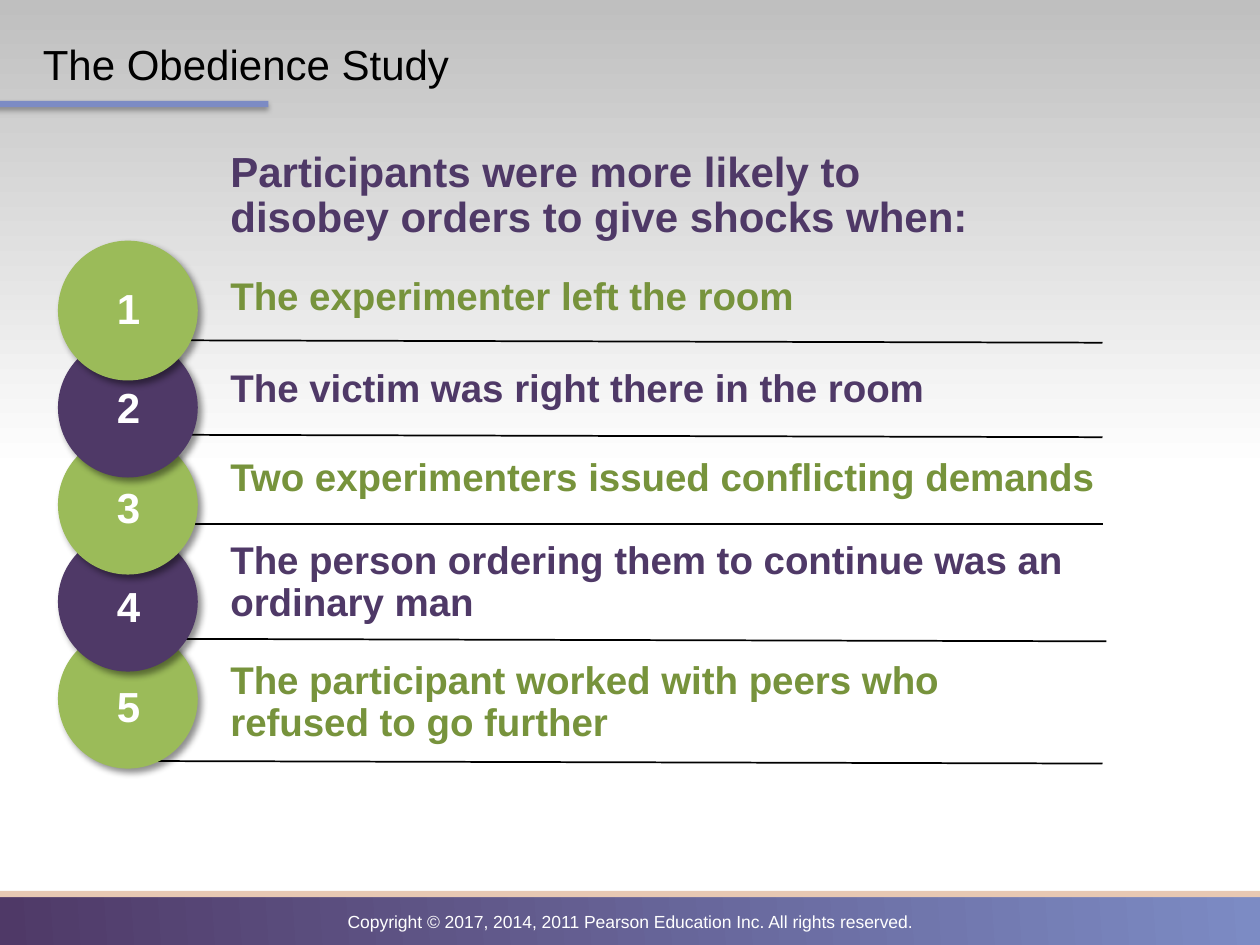
from lxml import etree
from pptx import Presentation
from pptx import util as u
from pptx.dml.color import RGBColor
from pptx.enum import shapes, text
from pptx.oxml.ns import qn

COLORS = {
    "white": "FFFFFF", "black": "000000", "gray": "BFBFBF",
    "purple": "4F3967", "blue": "7C8BC4", "peach": "E7C8B3",
    "green": "9BBB59", "dark green": "77933C",
}
FONT = "Arial"
TEXT_LEFT = 1.73
CIRCLE_LEFT, CIRCLE_TOP, CIRCLE_SIZE, CIRCLE_STEP = 0.46, 1.91, 1.11, 0.77
NUMBER_LEFT, NUMBER_TOP, NUMBER_WIDTH, NUMBER_STEP = 0.76, 2.19, 0.52, 0.79
RULE_LEFT = 1.1

# wording, text top, width, height, rule start height, rule right, rule drop
FINDINGS = [
    ("The experimenter left the room", 2.15, 6.24, 0.44, 2.7, 8.75, 0.02),
    ("The victim was right there in the room", 2.88, 6.91, 0.44, 3.45, 8.75, 0.02),
    ("Two experimenters issued conflicting demands", 3.59, 7.45, 0.44, 4.16, 8.75, 0),
    ("The person ordering them to continue was an ordinary man",
     4.25, 7.24, 0.77, 5.07, 8.78, 0.02),
    ("The participant worked with peers who refused to go further",
     5.2, 6.6, 0.77, 6.04, 8.75, 0.02),
]


def color(name):
    return RGBColor.from_string(COLORS[name])


def inches(*lengths):
    return [u.Inches(length) for length in lengths]


def set_gradient(fill, angle, stops):
    """Apply (color name, position) stops; the angle runs counter-clockwise."""
    fill.gradient()
    fill.gradient_angle = angle
    for stop, (name, position) in zip(fill.gradient_stops, stops):
        stop.color.rgb = color(name)
        stop.position = position


def make_shadow(opacity, blur, distance, angle):
    """Return an effect list with one outer shadow; lengths are in points."""
    effects = etree.Element(qn("a:effectLst"))
    shadow = etree.SubElement(
        effects, qn("a:outerShdw"), blurRad=str(u.Pt(blur)), dist=str(u.Pt(distance)),
        dir=str(angle * 60000), algn="ctr", rotWithShape="0")
    black = etree.SubElement(shadow, qn("a:srgbClr"), val=COLORS["black"])
    etree.SubElement(black, qn("a:alpha"), val=str(opacity * 1000))
    return effects


def add_block(slide, kind, box, fill=None, shadow=None):
    shape = slide.shapes.add_shape(kind, *inches(*box))
    shape.line.fill.background()
    if fill:
        shape.fill.solid()
        shape.fill.fore_color.rgb = color(fill)
    if shadow:
        shape._element.spPr.append(make_shadow(*shadow))
    else:
        shape.shadow.inherit = False
    return shape


def write(frame, words, size, name, bold=False, align=None, spacing=None):
    frame.word_wrap = True
    paragraph = frame.paragraphs[0]
    paragraph.alignment = align
    paragraph.line_spacing = spacing
    run = paragraph.add_run()
    run.text = words
    run.font.name = FONT
    run.font.size = u.Pt(size)
    run.font.bold = bold
    run.font.color.rgb = color(name)
    return run


def add_text(slide, box, words, size, name, **style):
    frame = slide.shapes.add_textbox(*inches(*box)).text_frame
    run = write(frame, words, size, name, **style)
    frame.auto_size = text.MSO_AUTO_SIZE.SHAPE_TO_FIT_TEXT
    return run


def add_rule(slide, top, right, drop):
    rule = slide.shapes.add_connector(
        shapes.MSO_CONNECTOR.STRAIGHT, *inches(RULE_LEFT, top, right, top + drop))
    rule.line.color.rgb = color("black")
    rule.line.width = u.Pt(1)
    etree.SubElement(rule._element.spPr, qn("a:effectLst"))


def add_frame(slide):
    """Background, footer band with copyright, and the bar under the title."""
    rectangle = shapes.MSO_SHAPE.RECTANGLE
    set_gradient(slide.background.fill, 90, [("white", 0.5), ("gray", 1)])
    band = add_block(slide, rectangle, (0, 7.08, 10, 0.45))
    set_gradient(band.fill, 4, [("purple", 0), ("blue", 1)])
    add_block(slide, rectangle, (0, 7.07, 10.05, 0.05), "peach")
    add_text(slide, (0, 7.18, 10, 0.27),
             "Copyright © 2017, 2014, 2011 Pearson Education Inc. All rights reserved.",
             10, "white", align=text.PP_ALIGN.CENTER)
    add_block(slide, rectangle, (-0.19, 0.8, 2.32, 0.05), "blue", (35, 3.1, 1.8, 90))


def add_title(slide, words):
    title = slide.shapes.title
    title.left, title.top, title.width, title.height = inches(0.24, 0.21, 8.5, 0.59)
    title.text_frame.vertical_anchor = text.MSO_ANCHOR.MIDDLE
    write(title.text_frame, words, 24, "black", align=text.PP_ALIGN.LEFT)


def add_circles(slide, count):
    """Stack overlapping circles with the first on top, then number them."""
    for index in reversed(range(count)):
        top = CIRCLE_TOP + index * CIRCLE_STEP
        add_block(slide, shapes.MSO_SHAPE.OVAL,
                  (CIRCLE_LEFT, top, CIRCLE_SIZE, CIRCLE_SIZE),
                  "purple" if index % 2 else "green", (43, 4, 3, 45))
    for index in range(count):
        top = NUMBER_TOP + index * NUMBER_STEP
        run = add_text(slide, (NUMBER_LEFT, top, NUMBER_WIDTH, 0.5), str(index + 1),
                       24, "white", bold=True, align=text.PP_ALIGN.CENTER)
        fill = run.font._element.find(qn("a:solidFill"))
        fill.addnext(make_shadow(43, 4, 3, 45))


def add_findings(slide):
    for _, _, _, _, top, right, drop in FINDINGS:
        add_rule(slide, top, right, drop)
    add_circles(slide, len(FINDINGS))
    for index, (words, top, width, height, *_) in enumerate(FINDINGS):
        add_text(slide, (TEXT_LEFT, top, width, height), words, 22,
                 "purple" if index % 2 else "dark green", bold=True, spacing=0.9)


def main():
    presentation = Presentation()
    presentation.slide_width, presentation.slide_height = inches(10, 7.5)
    slide = presentation.slides.add_slide(presentation.slide_layouts[5])
    add_frame(slide)
    add_findings(slide)
    add_title(slide, "The Obedience Study")
    add_text(slide, (TEXT_LEFT, 1.15, 6.18, 0.83),
             "Participants were more likely to disobey orders to give shocks when:",
             24, "purple", bold=True, spacing=0.9)
    presentation.save("out.pptx")


if __name__ == "__main__":
    main()
